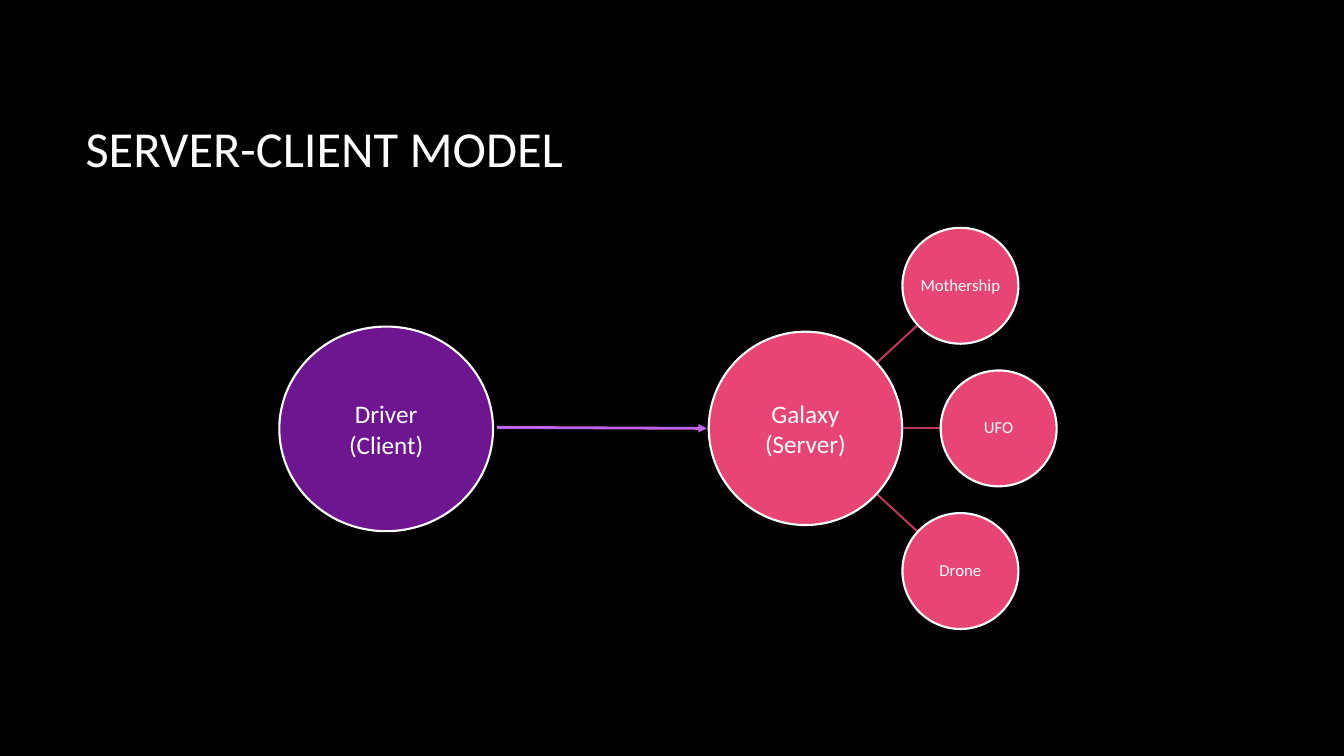
from math import hypot
from lxml.etree import SubElement as Sub
from pptx import Presentation
from pptx.dml.color import RGBColor as Rgb
from pptx.enum.shapes import MSO_CONNECTOR as Link, MSO_SHAPE as Form
from pptx.enum.text import MSO_ANCHOR as Anchor, PP_ALIGN as Align
from pptx.oxml.ns import qn
from pptx.util import Inches as In, Pt

WIDE, HIGH = 13.33, 7.5
HUE = {"back": "000000", "text": "FFFFFF", "client": "6E1590",
       "server": "E84574", "spoke": "BA375D", "arrow": "C363E8"}


def tint(name):
    return Rgb.from_string(HUE[name])


def write(frame, text, size=18, align=Align.CENTER, inset=0.1, space=None):
    frame.word_wrap = True
    frame.vertical_anchor = Anchor.MIDDLE
    frame.margin_left = frame.margin_right = In(inset)
    frame.margin_top = frame.margin_bottom = In(inset / 2)
    for num, row in enumerate(text.split("\n")):
        para = frame.add_paragraph() if num else frame.paragraphs[0]
        para.alignment = align
        para.line_spacing = space
        run = para.add_run()
        run.text = row
        run.font.name = "Calibri"
        run.font.size = Pt(size)
        run.font.color.rgb = tint("text")


def disc(slide, mid, wide, high, fill, text, **form):
    x, y = mid
    oval = slide.shapes.add_shape(Form.OVAL, In(x - wide / 2), In(y - high / 2),
                                  In(wide), In(high))
    oval.shadow.inherit = False
    oval.fill.solid()
    oval.fill.fore_color.rgb = tint(fill)
    oval.line.color.rgb = tint("text")
    oval.line.width = Pt(1.5)
    write(oval.text_frame, text, **form)


def join(slide, start, end, hue, width, head=False):
    line = slide.shapes.add_connector(Link.STRAIGHT, *map(In, start + end))
    line.line.color.rgb = tint(hue)
    line.line.width = Pt(width)
    prop = line.element.spPr
    if head:
        Sub(prop.find(qn("a:ln")), qn("a:tailEnd"), type="triangle")
    Sub(prop, qn("a:effectLst"))


def title(slide, box, text):
    area = slide.shapes.add_textbox(*map(In, box))
    write(area.text_frame, text, size=36, align=Align.LEFT)


def client(slide, box, text):
    x, y, wide, high = box
    disc(slide, (x + wide / 2, y + high / 2), wide, high, "client", text)


def server(slide, box, text, names):
    x, y, wide, high = box
    hub, moon = wide * 0.556, wide / 3
    cx, cy = x + hub / 2, y + high / 2
    step = (high - moon) / 2
    far = wide - (hub + moon) / 2
    near = far - wide * 0.11
    spots = [(cx + dx, cy + row * step)
             for row, dx in zip((-1, 0, 1), (near, far, near))]
    for px, py in spots:
        reach = hypot(px - cx, py - cy)
        ends = [(cx + (px - cx) * part, cy + (py - cy) * part)
                for part in (hub / 2 / reach, 1 - moon / 2 / reach)]
        join(slide, *ends, "spoke", 1.5)
    disc(slide, (cx, cy), hub, hub, "server", text)
    for spot, name in zip(spots, names):
        disc(slide, spot, moon, moon, "server", name, size=12, inset=0.01, space=0.9)


def main():
    deck = Presentation()
    deck.slide_width, deck.slide_height = In(WIDE), In(HIGH)
    slide = deck.slides.add_slide(deck.slide_layouts[6])
    slide.background.fill.solid()
    slide.background.fill.fore_color.rgb = tint("back")
    title(slide, (0.75, 0.67, 11.08, 1.59), "SERVER-CLIENT MODEL")
    server(slide, (7.03, 2.26, 3.45, 3.98), "Galaxy\n(Server)",
           ("Mothership", "UFO", "Drone"))
    client(slide, (2.77, 3.24, 2.12, 2.03), "Driver\n(Client)")
    join(slide, (4.93, 4.24), (7.01, 4.25), "arrow", 2, head=True)
    deck.save("out.pptx")


if __name__ == "__main__":
    main()
